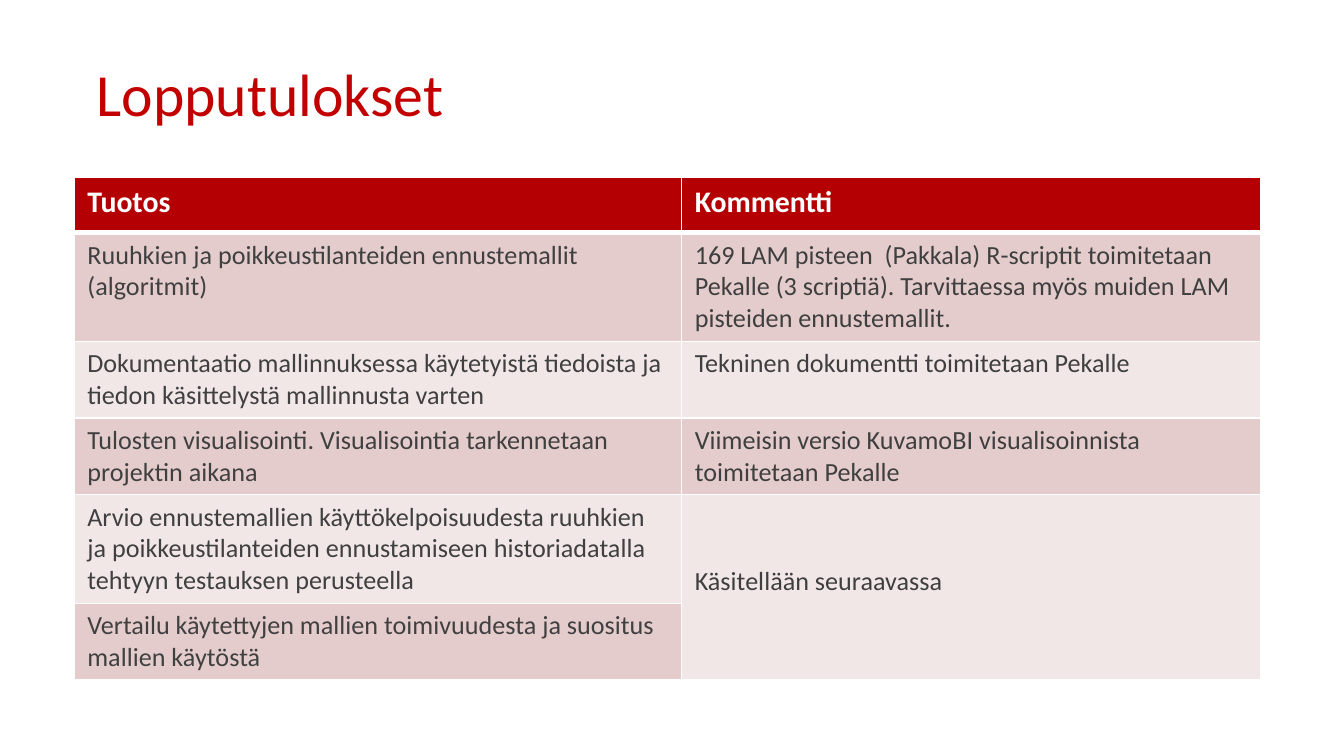
from lxml import etree
from pptx import Presentation
from pptx.dml.color import RGBColor
from pptx.enum import text
from pptx.oxml import ns
from pptx.util import Inches, Pt

FONT = "Calibri"
COLORS = {
    "title": "C30000",
    "header": "B40003",
    "band_dark": "E5CCCC",
    "band_light": "F2E7E7",
    "output": "404040",
    "comment": "3F3F3F",
    "white": "FFFFFF",
}
HEADINGS = ("Tuotos", "Kommentti")
RESULTS = [
    ("Ruuhkien ja poikkeustilanteiden ennustemallit (algoritmit)",
     "169 LAM pisteen  (Pakkala) R-scriptit toimitetaan Pekalle (3 scriptiä). "
     "Tarvittaessa myös muiden LAM pisteiden ennustemallit."),
    ("Dokumentaatio mallinnuksessa käytetyistä tiedoista ja tiedon käsittelystä "
     "mallinnusta varten",
     "Tekninen dokumentti toimitetaan Pekalle"),
    ("Tulosten visualisointi. Visualisointia tarkennetaan projektin aikana",
     "Viimeisin versio KuvamoBI visualisoinnista toimitetaan Pekalle"),
    ("Arvio ennustemallien käyttökelpoisuudesta ruuhkien ja poikkeustilanteiden "
     "ennustamiseen historiadatalla tehtyyn testauksen perusteella",
     "Käsitellään seuraavassa"),
    ("Vertailu käytettyjen mallien toimivuudesta ja suositus mallien käytöstä", None),
]
COLUMN_WIDTHS = (4.52, 4.31)
ROW_HEIGHTS = (0.41, 0.81, 0.57, 0.57, 0.81, 0.57)


def rgb(name):
    return RGBColor.from_string(COLORS[name])


def style_text(frame, size, color, bold=False):
    for paragraph in frame.paragraphs:
        for run in paragraph.runs:
            run.font.name = FONT
            run.font.size = Pt(size)
            run.font.bold = bold
            run.font.color.rgb = rgb(color)


def set_borders(cell, bottom):
    """White lines on all sides; they must stand before the cell fill."""
    properties = cell._tc.get_or_add_tcPr()
    sides = {"lnL": 1, "lnR": 1, "lnT": 1, "lnB": bottom}
    for position, (side, width) in enumerate(sides.items()):
        line = etree.Element(ns.qn("a:" + side), w=str(int(Pt(width))))
        fill = etree.SubElement(line, ns.qn("a:solidFill"))
        etree.SubElement(fill, ns.qn("a:srgbClr"), val=COLORS["white"])
        properties.insert(position, line)


def fill_cell(cell, wording, fill, size, color, bold=False, bottom=1):
    cell.fill.solid()
    cell.fill.fore_color.rgb = rgb(fill)
    set_borders(cell, bottom)
    if wording:
        cell.text_frame.text = wording
        style_text(cell.text_frame, size, color, bold)


def add_title(slide, wording):
    title = slide.shapes.add_textbox(Inches(0.62), Inches(0.38), Inches(8.76), Inches(0.63))
    frame = title.text_frame
    frame.word_wrap = True
    frame.vertical_anchor = text.MSO_ANCHOR.MIDDLE
    frame.text = wording
    frame.paragraphs[0].line_spacing = Pt(38)
    style_text(frame, 32, "title")


def add_results_table(slide):
    table = slide.shapes.add_table(
        len(ROW_HEIGHTS), len(COLUMN_WIDTHS), Inches(0.55), Inches(1.32),
        Inches(sum(COLUMN_WIDTHS)), Inches(sum(ROW_HEIGHTS))).table
    for column, width in zip(table.columns, COLUMN_WIDTHS):
        column.width = Inches(width)
    for row, height in zip(table.rows, ROW_HEIGHTS):
        row.height = Inches(height)

    # Header row with a thicker line below
    for column, heading in enumerate(HEADINGS):
        fill_cell(table.cell(0, column), heading, "header", 16, "white", True, 3)

    # Banded result rows
    for row, result in enumerate(RESULTS, start=1):
        band = "band_dark" if row % 2 else "band_light"
        for column, (wording, color) in enumerate(zip(result, ("output", "comment"))):
            fill_cell(table.cell(row, column), wording, band, 14, color)

    # The last comment covers two rows and starts two lines down
    shared_comment = table.cell(4, 1)
    shared_comment.merge(table.cell(5, 1))
    shared_comment.margin_top = Inches(0.53)


def main():
    # Widescreen slide, 16:9
    deck = Presentation()
    deck.slide_width = Inches(10)
    deck.slide_height = deck.slide_width * 9 // 16
    slide = deck.slides.add_slide(deck.slide_layouts[6])
    add_title(slide, "Lopputulokset")
    add_results_table(slide)
    deck.save("out.pptx")


if __name__ == "__main__":
    main()
